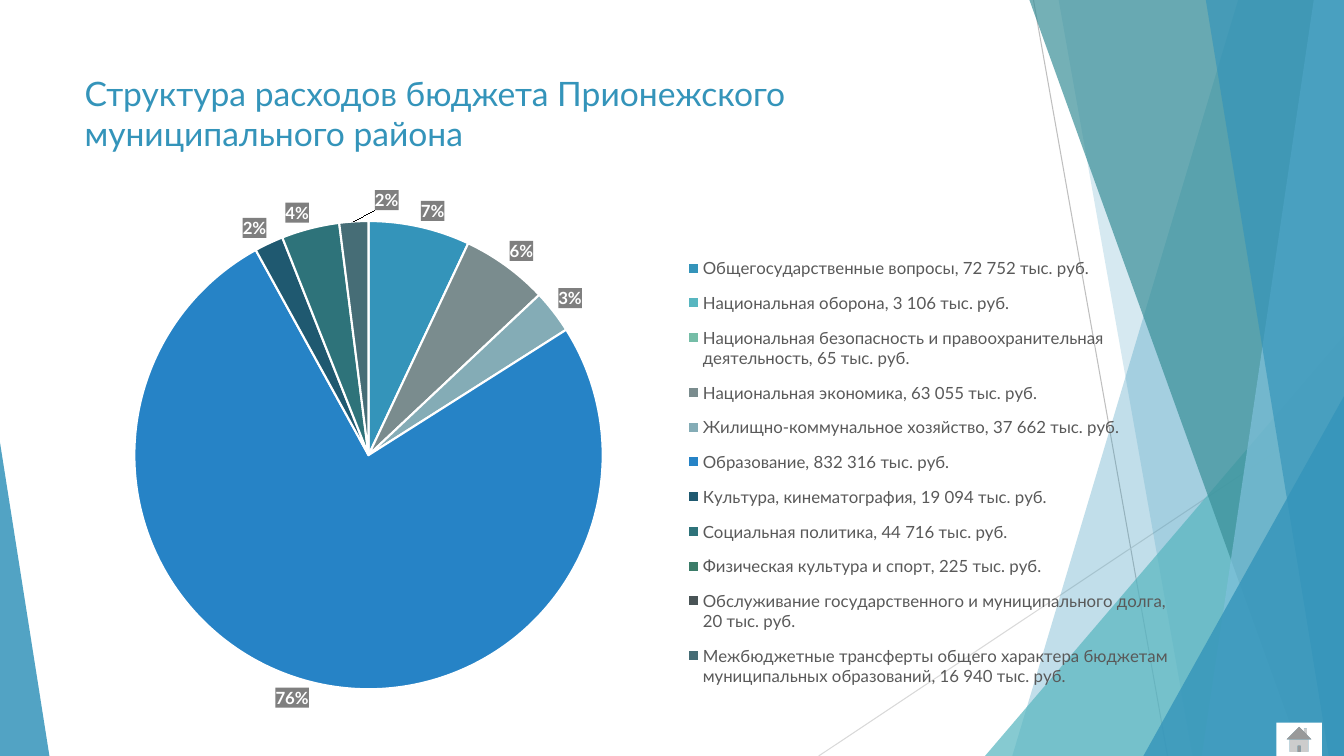
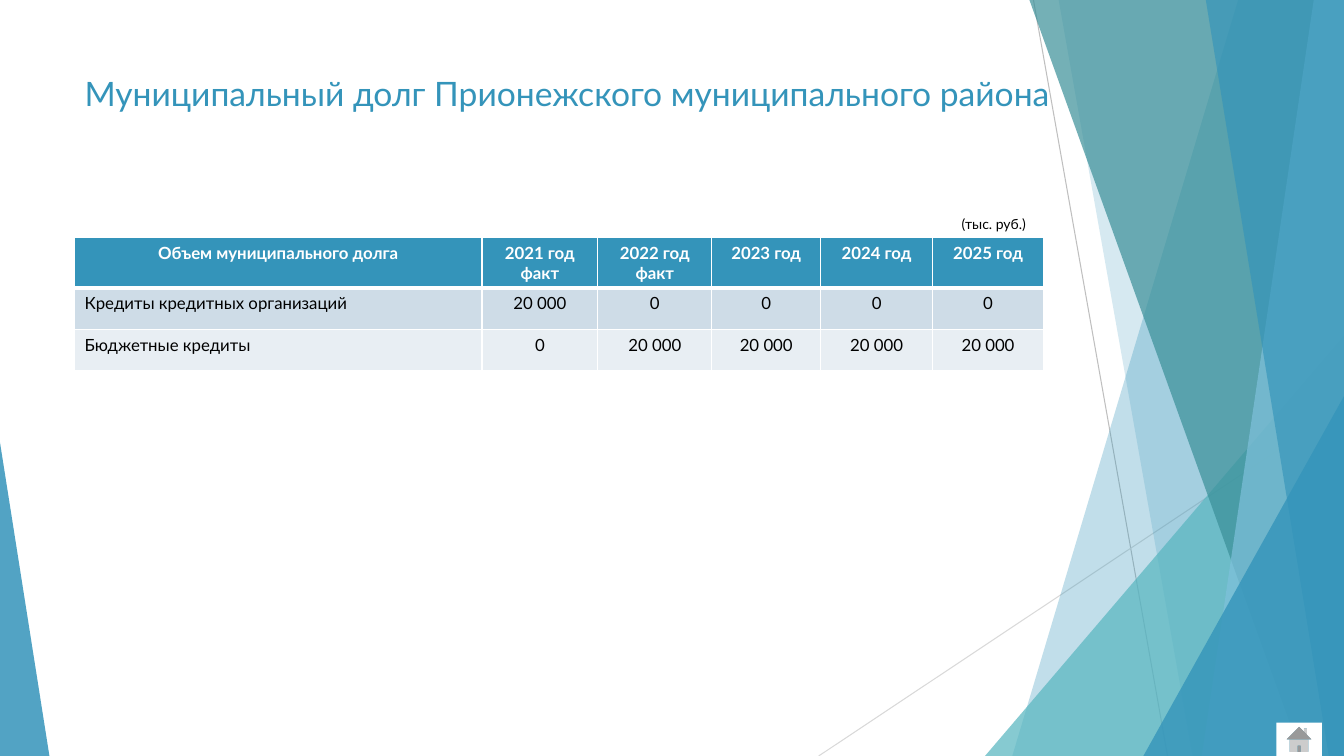
import copy

import lxml.etree
import pptx
import pptx.chart.data
import pptx.dml.color
import pptx.enum.chart
import pptx.enum.shapes
import pptx.enum.text
import pptx.oxml
import pptx.oxml.ns
import pptx.util

Inches, Pt = pptx.util.Inches, pptx.util.Pt
qn = pptx.oxml.ns.qn
Shape = pptx.enum.shapes.MSO_SHAPE
Align = pptx.enum.text.PP_ALIGN

WIDE, HIGH, EDGE = 13.33, 7.5, 0.74
FONT = "Lato"
BLUE, WHITE, BLACK, GREY = "3494BA", "FFFFFF", "000000", "7F7F7F"
BANDS = ["CEDCE7", "E8EEF3"]

# Slanted panes reach the right edge: top x, bottom x, colour, opacity.
# Wedges are triangles: left, top, width, apex, colour, opacity.
DECOR = [
    (12.28, 10.04, BLUE, 30),
    (10.5, 11.83, BLUE, 20),
    (9.77, 3.33, 3.56, 1, "58B6C0", 72),
    (10.21, 12.91, "3A8F98", 70),
    (13.03, 11.92, "7FC1DB", 70),
    (11.96, 13.18, BLUE, 65),
    (11.34, 3.93, 1.99, 1, BLUE, 80),
    (0, 4.39, 0.49, 0, BLUE, 85),
]
RAYS = [(10.25, 0, 11.58, HIGH, "BFBFBF"), (WIDE, 4.03, 8.12, HIGH, "D9D9D9")]

# Name, share in percent, colour.
COSTS = [
    ("Общегосударственные вопросы, 72 752 тыс. руб.", 7, BLUE),
    ("Национальная оборона, 3 106 тыс. руб.", 0, "58B6C0"),
    ("Национальная безопасность и правоохранительная деятельность, 65 тыс. руб.",
     0, "75BDA7"),
    ("Национальная экономика, 63 055 тыс. руб.", 6, "7A8C8E"),
    ("Жилищно-коммунальное хозяйство, 37 662 тыс. руб.", 3, "84ACB6"),
    ("Образование, 832 316 тыс. руб.", 76, "2683C6"),
    ("Культура, кинематография, 19 094 тыс. руб.", 2, "1F5970"),
    ("Социальная политика, 44 716 тыс. руб.", 4, "2E737A"),
    ("Физическая культура и спорт, 225 тыс. руб.", 0, "3B7C68"),
    ("Обслуживание государственного и муниципального долга, 20 тыс. руб.",
     0, "495456"),
    ("Межбюджетные трансферты общего характера бюджетам муниципальных "
     "образований, 16 940 тыс. руб.", 2, "466D76"),
]
SHIFTS = {1: (0, -0.04), 2: (0.04, -0.02), 10: (0.03, -0.01)}

DEBT = [
    ["Объем муниципального долга", "2021 год\nфакт", "2022 год\nфакт",
     "2023 год", "2024 год", "2025 год"],
    ["Кредиты кредитных организаций", "20 000", "0", "0", "0", "0"],
    ["Бюджетные кредиты", "0", "20 000", "20 000", "20 000", "20 000"],
]
COLS = [4.04, 1.15, 1.13, 1.08, 1.11, 1.1]


def tint(code):
    return pptx.dml.color.RGBColor.from_string(code)


def style(font, size, code, bold=False):
    font.name, font.size, font.bold = FONT, Pt(size), bold
    font.color.rgb = tint(code)


def paint(shape, code, alpha=100):
    """Fill a shape, without line or shadow, at an opacity in percent."""
    shape.shadow.inherit = False
    shape.line.fill.background()
    shape.fill.solid()
    shape.fill.fore_color.rgb = tint(code)
    if alpha < 100:
        node = shape._element.spPr.find(".//" + qn("a:srgbClr"))
        lxml.etree.SubElement(node, qn("a:alpha"), val=str(alpha * 1000))


def write(frame, text, size, code, bold=False, align=Align.LEFT):
    """Fill the first paragraph, one run for each line."""
    para = frame.paragraphs[0]
    para.alignment = align
    for i, line in enumerate(text.split("\n")):
        if i:
            para.add_line_break()
        run = para.add_run()
        run.text = line
        style(run.font, size, code, bold)


def label(slide, box, text, size, code):
    frame = slide.shapes.add_textbox(*map(Inches, box)).text_frame
    frame.word_wrap = True
    write(frame, text, size, code)


def ray(group, x1, y1, x2, y2, code):
    kind = pptx.enum.shapes.MSO_CONNECTOR.STRAIGHT
    line = group.shapes.add_connector(kind, *map(Inches, (x1, y1, x2, y2)))
    line.line.color.rgb = tint(code)
    line.line.width = Pt(0.75)
    lxml.etree.SubElement(line._element.spPr, qn("a:effectLst"))


def pane(group, top, foot, code, alpha):
    outline = group.shapes.build_freeform(Inches(top), 0)
    spots = [(WIDE, 0), (WIDE, HIGH), (foot, HIGH)]
    outline.add_line_segments([(Inches(x), Inches(y)) for x, y in spots])
    paint(outline.convert_to_shape(), code, alpha)


def wedge(group, x, y, width, apex, code, alpha):
    box = map(Inches, (x, y, width, HIGH - y))
    shape = group.shapes.add_shape(Shape.ISOSCELES_TRIANGLE, *box)
    shape.adjustments[0] = apex
    paint(shape, code, alpha)


def page(deck, title, width):
    """Add a slide with the shared backdrop, title and home button."""
    slide = deck.slides.add_slide(deck.slide_layouts[6])
    group = slide.shapes.add_group_shape()
    for item in RAYS:
        ray(group, *item)
    for item in DECOR:
        draw = pane if len(item) == 4 else wedge
        draw(group, *item)
    label(slide, (EDGE, 0.67, width, 0.97), title, 24, BLUE)
    box = map(Inches, (12.66, 7.17, 0.45, 0.33))
    paint(slide.shapes.add_shape(Shape.ACTION_BUTTON_HOME, *box), WHITE)
    return slide


def place(x, y, w=None, h=None):
    """Give a chart layout node: a box when sized, else an offset."""
    layout = pptx.oxml.parse_xml(
        "<c:layout %s><c:manualLayout/></c:layout>" % pptx.oxml.ns.nsdecls("c"))
    parts = [("x", x), ("y", y)]
    if w is not None:
        parts = [("xMode", "edge"), ("yMode", "edge"), *parts, ("w", w), ("h", h)]
    for tag, val in parts:
        lxml.etree.SubElement(layout[0], qn("c:" + tag), val=str(val))
    return layout


def tags(series):
    """Show shares on grey plates, a few of them shifted."""
    labels = series.data_labels
    labels.show_percentage, labels.show_value = True, False
    labels.number_format, labels.number_format_is_linked = "0%", False
    labels.position = pptx.enum.chart.XL_LABEL_POSITION.OUTSIDE_END
    style(labels.font, 12, WHITE, True)
    root = labels._element
    plate = pptx.oxml.parse_xml(
        '<c:spPr %s><a:solidFill><a:srgbClr val="%s"/></a:solidFill></c:spPr>'
        % (pptx.oxml.ns.nsdecls("c", "a"), GREY))
    root.find(qn("c:txPr")).addprevious(plate)
    shared = [n for n in root if n.tag != qn("c:showLeaderLines")]
    for spot, (idx, shift) in enumerate(SHIFTS.items()):
        node = lxml.etree.Element(qn("c:dLbl"))
        lxml.etree.SubElement(node, qn("c:idx"), val=str(idx))
        node.append(place(*shift))
        node.extend(copy.deepcopy(shared))
        root.insert(spot, node)


def pie(slide, box):
    data = pptx.chart.data.CategoryChartData()
    data.categories = [name for name, _, _ in COSTS]
    data.add_series("Series 1", [share for _, share, _ in COSTS])
    kind = pptx.enum.chart.XL_CHART_TYPE.PIE
    chart = slide.shapes.add_chart(kind, *map(Inches, box), data).chart
    chart.has_title = False
    style(chart.font, 10, BLACK)
    plot = chart.plots[0]
    plot.vary_by_categories = True
    series = plot.series[0]
    for i, (_, _, code) in enumerate(COSTS):
        slice_ = series.points[i].format
        slice_.fill.solid()
        slice_.fill.fore_color.rgb = tint(code)
        slice_.line.color.rgb = tint(WHITE)
        slice_.line.width = Pt(1.5)
    tags(series)

    area = chart._chartSpace.find(".//" + qn("c:plotArea"))
    for old in area.findall(qn("c:layout")):
        area.remove(old)
    frame = place(0.05, 0.1, 0.43, 0.84)
    target = lxml.etree.Element(qn("c:layoutTarget"), val="inner")
    frame[0].insert(0, target)
    area.insert(0, frame)

    chart.has_legend = True
    legend = chart.legend
    legend.position = pptx.enum.chart.XL_LEGEND_POSITION.RIGHT
    legend.include_in_layout = False
    style(legend.font, 12, "595959")
    root = legend._element
    for old in root.findall(qn("c:layout")):
        root.remove(old)
    root.find(qn("c:legendPos")).addnext(place(0.55, 0.14, 0.44, 0.82))


def border(cell, top, foot):
    """Draw white sides, with given top and bottom widths in points."""
    props = cell._tc.get_or_add_tcPr()
    sides = [("L", 1), ("R", 1), ("T", top), ("B", foot)]
    for spot, (side, width) in enumerate(sides):
        line = lxml.etree.Element(qn("a:ln" + side), w=str(Pt(width)))
        fill = lxml.etree.SubElement(line, qn("a:solidFill"))
        lxml.etree.SubElement(fill, qn("a:srgbClr"), val=WHITE)
        props.insert(spot, line)


def debts(slide, x, y):
    high = 0.41
    box = map(Inches, (x, y, sum(COLS), high * len(DEBT)))
    table = slide.shapes.add_table(len(DEBT), len(COLS), *box).table
    for col, width in zip(table.columns, COLS):
        col.width = Inches(width)
    for r, row in enumerate(DEBT):
        table.rows[r].height = Inches(high)
        head = r == 0
        for c, text in enumerate(row):
            cell = table.cell(r, c)
            cell.fill.solid()
            cell.fill.fore_color.rgb = tint(BLUE if head else BANDS[r - 1])
            align = Align.CENTER if head or c else Align.LEFT
            write(cell.text_frame, text, 12, WHITE if head else BLACK, head, align)
            border(cell, 3 if r == 1 else 1, 3 if head else 1)


def main():
    deck = pptx.Presentation()
    deck.slide_width, deck.slide_height = Inches(WIDE), Inches(HIGH)

    slide = page(deck, "Структура расходов бюджета Прионежского "
                       "муниципального района", 8.22)
    pie(slide, (EDGE, 1.64, 11, 5.53))

    slide = page(deck, "Муниципальный долг Прионежского "
                       "муниципального района", 9.81)
    debts(slide, EDGE, 2.36)
    label(slide, (9.44, 2.09, 0.92, 0.27), "(тыс. руб.)", 10, BLACK)

    deck.save("out.pptx")


if __name__ == "__main__":
    main()
